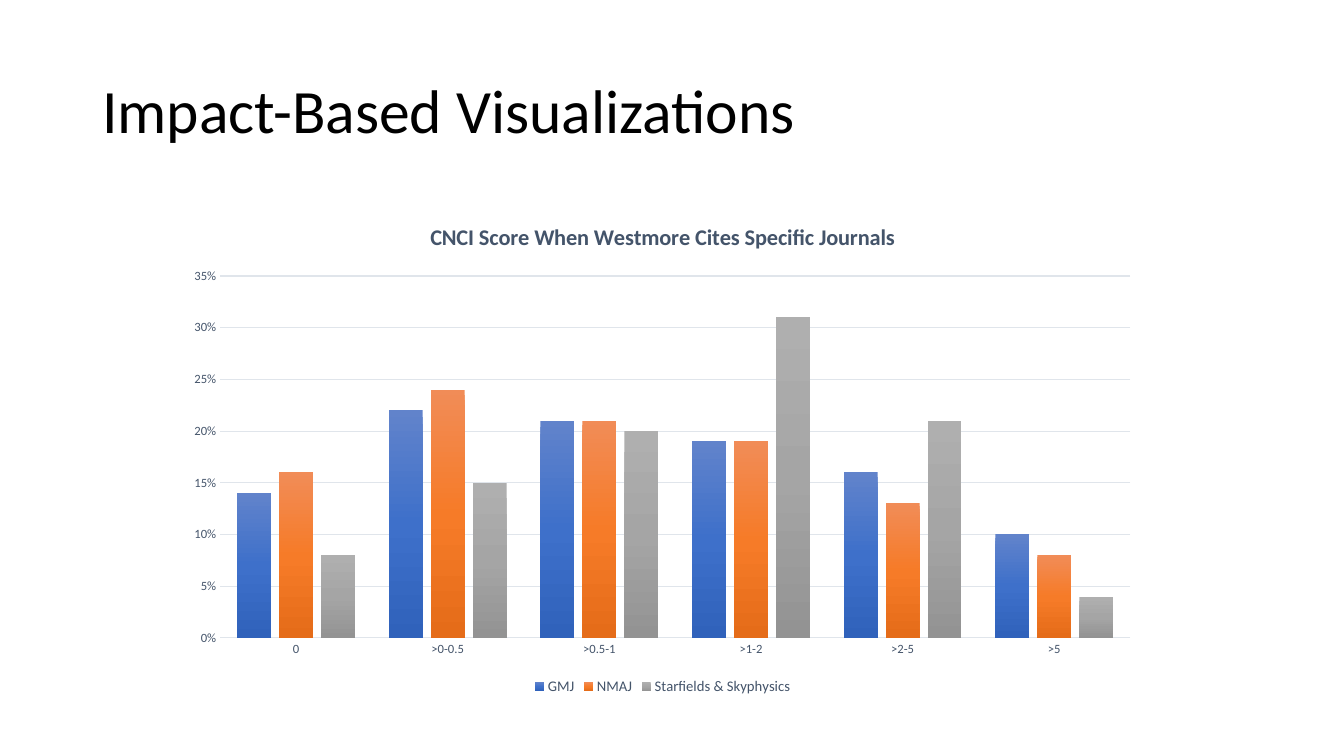
from lxml import etree
from pptx import Presentation
from pptx.chart.data import CategoryChartData
from pptx.dml.color import RGBColor
from pptx.enum.chart import XL_CHART_TYPE, XL_LEGEND_POSITION, XL_TICK_MARK
from pptx.enum.text import MSO_ANCHOR
from pptx.oxml import parse_xml
from pptx.oxml.ns import nsdecls, qn
from pptx.util import Pt

COLUMN = XL_CHART_TYPE.COLUMN_CLUSTERED
BOTTOM = XL_LEGEND_POSITION.BOTTOM
NO_TICK = XL_TICK_MARK.NONE
MIDDLE = MSO_ANCHOR.MIDDLE

CATEGORIES = ["0", ">0-0.5", ">0.5-1", ">1-2", ">2-5", ">5"]
SERIES = [
    ("GMJ", [0.14, 0.22, 0.21, 0.19, 0.16, 0.1], ["6183CB", "3E70CA", "3062BB"]),
    ("NMAJ", [0.16, 0.24, 0.21, 0.19, 0.13, 0.08], ["F18C57", "F67B28", "E56C19"]),
    ("Starfields & Skyphysics", [0.08, 0.15, 0.2, 0.31, 0.21, 0.04],
     ["AFAFAF", "A5A5A5", "939393"]),
]


def rgb(value):
    return RGBColor.from_string(value)


class SlideBuilder:
    font = "Calibri"
    black = "000000"
    slate = "44546A"
    grid = "E0E5EB"

    def __init__(self, prs):
        self.slide = prs.slides.add_slide(prs.slide_layouts[6])

    def style(self, font, size, color, bold=False):
        font.name = self.font
        font.size = Pt(size)
        font.bold = bold
        font.color.rgb = rgb(color)

    def line(self, fmt):
        fmt.line.color.rgb = rgb(self.grid)
        fmt.line.width = Pt(0.75)

    def title(self, text, left, top, width, height):
        sp = self.slide.shapes.add_textbox(Pt(left), Pt(top), Pt(width), Pt(height))
        tf = sp.text_frame
        tf.word_wrap = True
        tf.vertical_anchor = MIDDLE
        p = tf.paragraphs[0]
        p.line_spacing = 0.9
        r = p.add_run()
        r.text = text
        self.style(r.font, 44, self.black)

    def gradient(self, series, colors):
        series.format.fill.solid()
        solid = series.format.fill._xPr.find(qn("a:solidFill"))
        stops = "".join(
            f'<a:gs pos="{i * 50000}"><a:srgbClr val="{color}"/></a:gs>'
            for i, color in enumerate(colors))
        grad = parse_xml(
            f'<a:gradFill {nsdecls("a")} rotWithShape="1"><a:gsLst>{stops}</a:gsLst>'
            '<a:lin ang="5400000" scaled="0"/></a:gradFill>')
        solid.getparent().replace(solid, grad)

    def plot_layout(self, chart, left, top, width, height, chart_width, chart_height):
        area = chart._chartSpace.chart.plotArea
        for old in area.findall(qn("c:layout")):
            area.remove(old)
        layout = etree.Element(qn("c:layout"))
        manual = etree.SubElement(layout, qn("c:manualLayout"))
        settings = [("layoutTarget", "inner"), ("xMode", "edge"), ("yMode", "edge"),
                    ("x", left / chart_width), ("y", top / chart_height),
                    ("w", width / chart_width), ("h", height / chart_height)]
        for tag, value in settings:
            etree.SubElement(manual, qn(f"c:{tag}")).set("val", str(value))
        area.insert(0, layout)

    def column_chart(self, title, left, top, width, height):
        data = CategoryChartData(number_format="0%")
        data.categories = CATEGORIES
        for name, values, _ in SERIES:
            data.add_series(name, values)
        chart = self.slide.shapes.add_chart(
            COLUMN, Pt(left), Pt(top), Pt(width), Pt(height), data).chart
        self.style(chart.font, 10, self.black)

        chart.has_title = True
        r = chart.chart_title.text_frame.paragraphs[0].add_run()
        r.text = title
        self.style(r.font, 16, self.slate, True)
        chart.chart_title.include_in_layout = False

        chart.has_legend = True
        chart.legend.position = BOTTOM
        chart.legend.include_in_layout = False
        self.style(chart.legend.font, 10.5, self.slate)

        for axis in (chart.category_axis, chart.value_axis):
            axis.major_tick_mark = NO_TICK
            axis.minor_tick_mark = NO_TICK
            self.style(axis.tick_labels.font, 9, self.slate)
        self.line(chart.category_axis.format)

        axis = chart.value_axis
        axis.minimum_scale = 0
        axis.maximum_scale = 0.35
        axis.major_unit = 0.05
        axis.format.line.fill.background()
        axis.has_major_gridlines = True
        self.line(axis.major_gridlines.format)
        axis.tick_labels.number_format = "0%"
        axis.tick_labels.number_format_is_linked = False

        plot = chart.plots[0]
        plot.gap_width = 100
        plot.overlap = -24
        plot.vary_by_categories = False
        for series, (_, _, colors) in zip(plot.series, SERIES):
            self.gradient(series, colors)
        self.plot_layout(chart, 32, 52.5, 650, 258.5, width, height)


def main():
    prs = Presentation()
    prs.slide_width = Pt(960)
    prs.slide_height = Pt(540)
    s = SlideBuilder(prs)
    s.title("Impact-Based Visualizations", 66, 28.75, 828, 104.4)
    s.column_chart("CNCI Score When Westmore Cites Specific Journals",
                   125.3, 144.7, 696.2, 355)
    prs.save("out.pptx")


if __name__ == "__main__":
    main()
